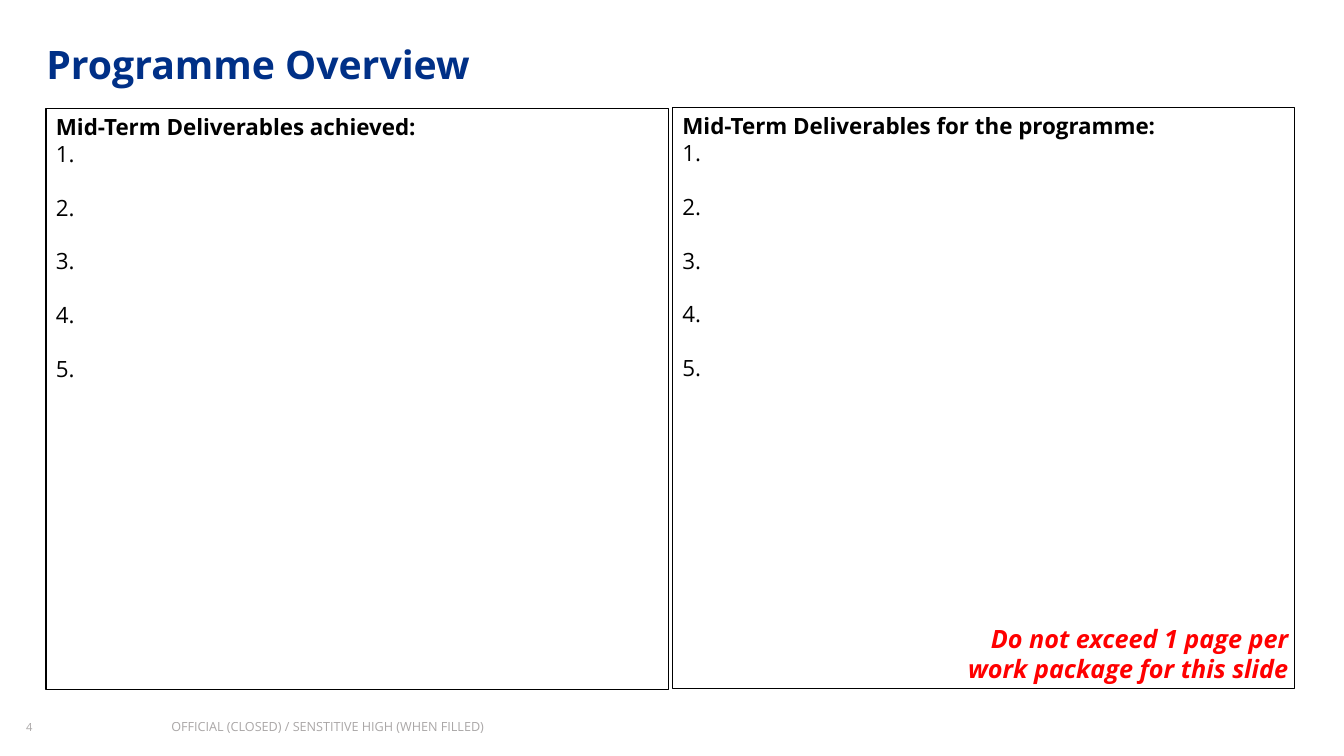
"""Build the Programme Overview slide with two deliverables panels."""
from lxml import etree
from pptx import Presentation
from pptx.dml.color import RGBColor
from pptx.enum.shapes import MSO_SHAPE
from pptx.enum.text import MSO_ANCHOR, PP_ALIGN
from pptx.oxml.ns import qn
from pptx.util import Cm, Pt

RECT = MSO_SHAPE.RECTANGLE
TOP = MSO_ANCHOR.TOP
LEFT, RIGHT = PP_ALIGN.LEFT, PP_ALIGN.RIGHT
FONT = "Open Sans"
COLORS = {"title": "003087", "text": "000000", "note": "FF0000", "footer": "767171"}
FOOTER_ALPHA = 61
ITEMS = 5


def add_run(p, text, size, color, bold=False, italic=False, alpha=None):
    r = p.add_run()
    r.text = text
    r.font.name = FONT
    r.font.size = Pt(size)
    r.font.bold = bold
    r.font.italic = italic
    r.font.color.rgb = RGBColor.from_string(COLORS[color])
    if alpha:
        clr = r.font.fill._xPr.find(".//" + qn("a:srgbClr"))
        etree.SubElement(clr, qn("a:alpha"), val=str(alpha * 1000))


def add_text(s, box, text, size, color, align=LEFT, spacing=1, inset=True, **style):
    tf = s.shapes.add_textbox(*map(Cm, box)).text_frame
    tf.word_wrap = True
    tf.vertical_anchor = TOP
    if not inset:
        tf.margin_left = tf.margin_right = tf.margin_top = tf.margin_bottom = 0
    p = tf.paragraphs[0]
    p.alignment = align
    p.line_spacing = spacing
    add_run(p, text, size, color, **style)


def add_panel(s, left, top, heading):
    sp = s.shapes.add_shape(RECT, Cm(left), Cm(top), Cm(15.68), Cm(14.65))
    sp.shadow.inherit = False
    sp.fill.background()
    sp.line.color.rgb = RGBColor.from_string(COLORS["text"])
    sp.line.width = Pt(0.75)
    tf = sp.text_frame
    tf.word_wrap = True
    tf.vertical_anchor = TOP
    p = tf.paragraphs[0]
    p.alignment = LEFT
    add_run(p, heading, 16, "text", bold=True)
    for number in range(1, ITEMS + 1):
        p = tf.add_paragraph()
        p.alignment = LEFT
        if number > 1:
            p.space_before = Pt(19.2)
        add_run(p, f"{number}.", 16, "text")


def main():
    prs = Presentation()
    prs.slide_width, prs.slide_height = Cm(33.87), Cm(19.05)
    s = prs.slides.add_slide(prs.slide_layouts[6])
    add_text(s, (0.66, 18.11, 2, 0.48), "4", 8, "footer",
             spacing=1.1, inset=False, alpha=FOOTER_ALPHA)
    add_text(s, (1.17, 0.89, 30.33, 1.32), "Programme Overview", 28, "title",
             spacing=1.1, inset=False, bold=True)
    add_panel(s, 16.95, 2.71, "Mid-Term Deliverables for the programme:")
    add_panel(s, 1.16, 2.73, "Mid-Term Deliverables achieved:")
    add_text(s, (24.08, 15.57, 8.64, 1.8),
             "Do not exceed 1 page per work package for this slide", 18, "note",
             align=RIGHT, bold=True, italic=True)
    add_text(s, (4.32, 18.11, 13.54, 0.48),
             "OFFICIAL (CLOSED) / SENSTITIVE HIGH (WHEN FILLED)", 9, "footer",
             inset=False, alpha=FOOTER_ALPHA)
    prs.save("out.pptx")


if __name__ == "__main__":
    main()
